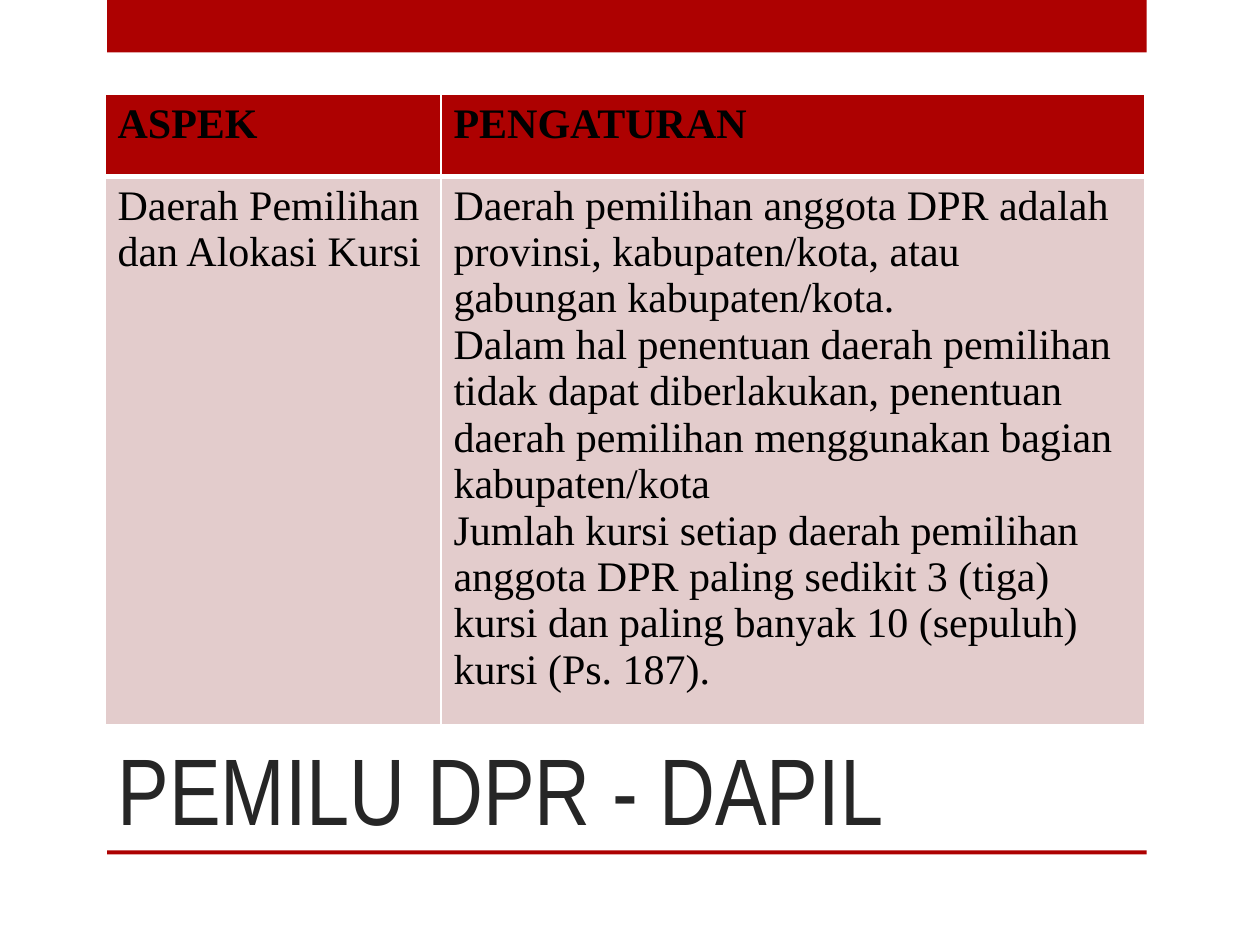
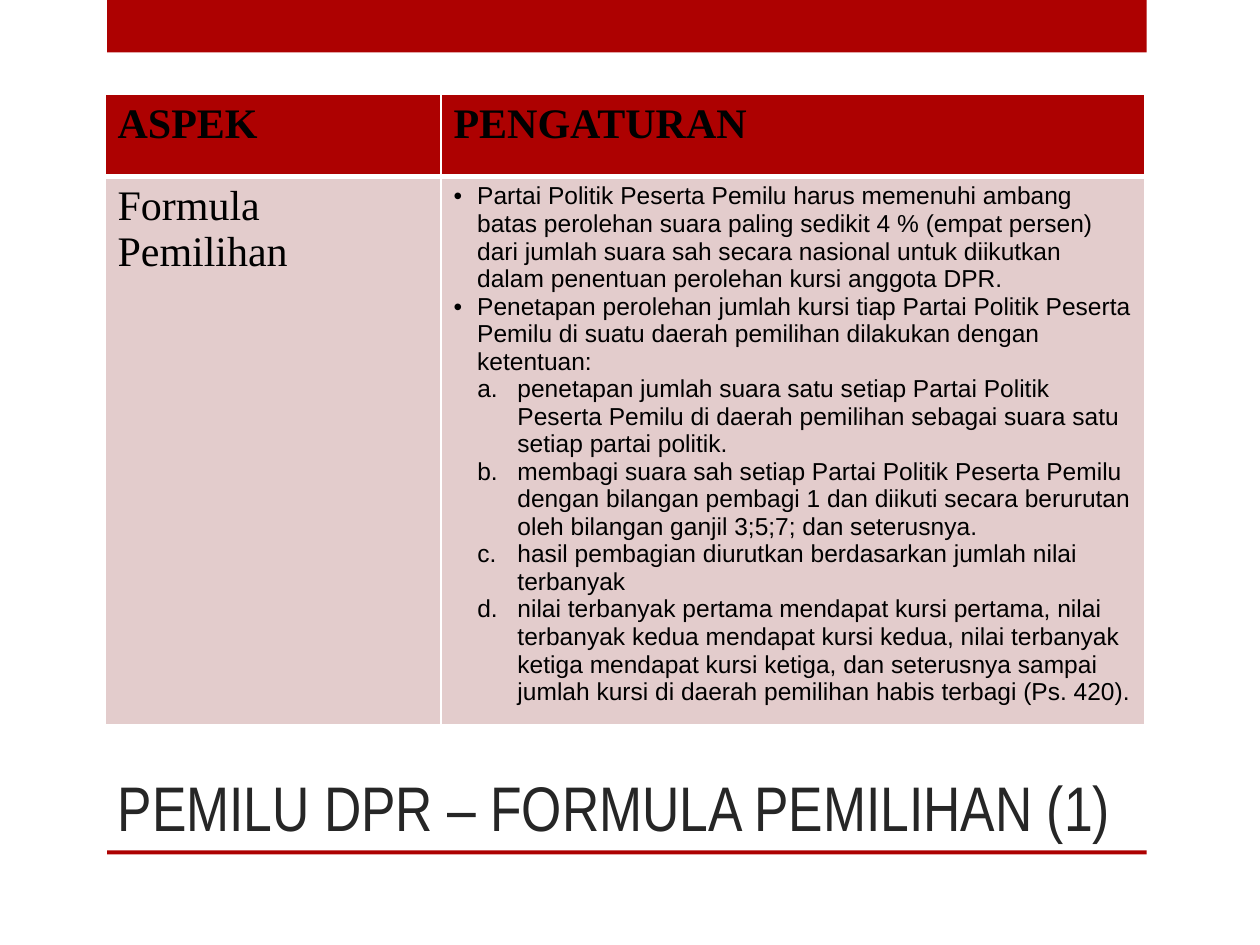
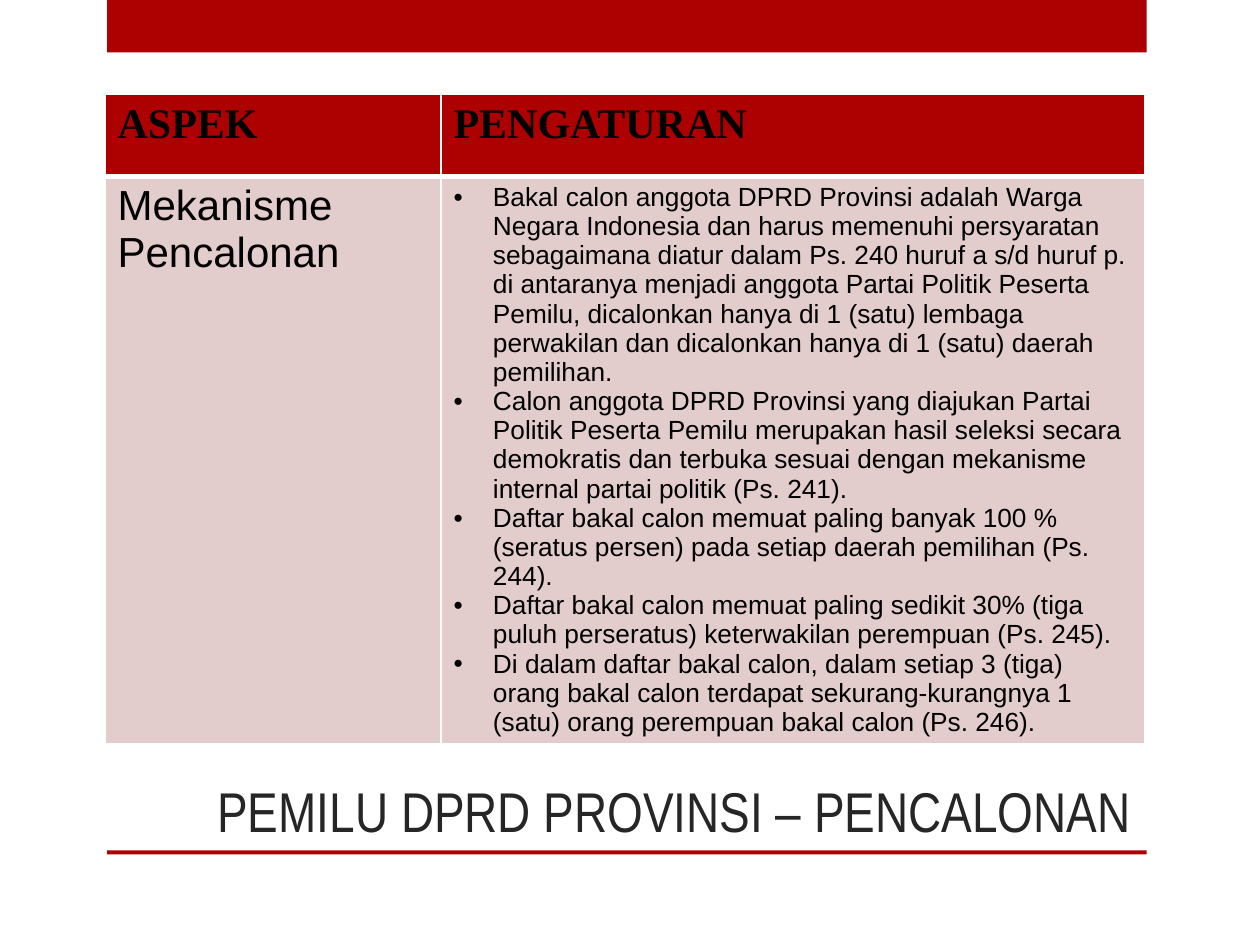
from lxml import etree
from pptx import Presentation
from pptx.dml.color import RGBColor
from pptx.enum.shapes import MSO_SHAPE
from pptx.enum.text import MSO_ANCHOR, MSO_AUTO_SIZE, PP_ALIGN
from pptx.oxml.ns import qn
from pptx.util import Pt

RECT = MSO_SHAPE.RECTANGLE
BOTTOM = MSO_ANCHOR.BOTTOM
NO_FIT = MSO_AUTO_SIZE.NONE
LEFT, RIGHT = PP_ALIGN.LEFT, PP_ALIGN.RIGHT

COLORS = {"red": "AD0101", "pink": "E3CCCC", "white": "FFFFFF",
          "black": "000000", "title": "262626"}
SERIF, SANS, NARROW = "Times New Roman", "Arial", "Arial Narrow"
BASE = {"name": SERIF, "size": Pt(24), "bold": False}
HEADER = {**BASE, "bold": True}
SANS_24 = {**BASE, "name": SANS}
SANS_15 = {**SANS_24, "size": Pt(15)}
SANS_14 = {**SANS_24, "size": Pt(14)}

TABLE_LEFT, TABLE_TOP = 60, 54
COLUMNS = (192, 402)
ROWS = (46.8, 313.2)
WIDTH = sum(COLUMNS)
BAND_LEFT = 61.2
BANDS = ((0, 30), (486, 2.2))

BULLET = ("buChar", {"char": "•"}, 13.5, 13.5)
WIDE_BULLET = ("buChar", {"char": "•"}, 22.5, 22.5)
LETTER = ("buAutoNum", {"type": "alphaLcPeriod"}, 36.5, 23)

DAPIL = [
    "Daerah pemilihan anggota DPR adalah provinsi, kabupaten/kota, atau gabungan kabupaten/kota.",
    "Dalam hal penentuan daerah pemilihan tidak dapat diberlakukan, penentuan daerah pemilihan "
    "menggunakan bagian kabupaten/kota",
    "Jumlah kursi setiap daerah pemilihan anggota DPR paling sedikit 3 (tiga) kursi dan paling "
    "banyak 10 (sepuluh) kursi (Ps. 187).",
]
FORMULA = [
    "Partai Politik Peserta Pemilu harus memenuhi ambang batas perolehan suara paling sedikit 4 % "
    "(empat persen) dari jumlah suara sah secara nasional untuk diikutkan dalam penentuan "
    "perolehan kursi anggota DPR.",
    "Penetapan perolehan jumlah kursi tiap Partai Politik Peserta Pemilu di suatu daerah pemilihan "
    "dilakukan dengan ketentuan:",
]
FORMULA_STEPS = [
    "penetapan jumlah suara satu setiap Partai Politik Peserta Pemilu di daerah pemilihan sebagai "
    "suara satu setiap partai politik.",
    "membagi suara sah setiap Partai Politik Peserta Pemilu dengan bilangan pembagi 1 dan diikuti "
    "secara berurutan oleh bilangan ganjil 3;5;7; dan seterusnya.",
    "hasil pembagian diurutkan berdasarkan jumlah nilai terbanyak",
    "nilai terbanyak pertama mendapat kursi pertama, nilai terbanyak kedua mendapat kursi kedua, "
    "nilai terbanyak ketiga mendapat kursi ketiga, dan seterusnya sampai jumlah kursi di daerah "
    "pemilihan habis terbagi (Ps. 420).",
]
PENCALONAN = [
    "Bakal calon anggota DPRD Provinsi adalah Warga Negara Indonesia dan harus memenuhi "
    "persyaratan sebagaimana diatur dalam Ps. 240 huruf a s/d huruf p. di antaranya menjadi "
    "anggota Partai Politik Peserta Pemilu, dicalonkan hanya di 1 (satu) lembaga perwakilan dan "
    "dicalonkan hanya di 1 (satu) daerah pemilihan.",
    "Calon anggota DPRD Provinsi yang diajukan Partai Politik Peserta Pemilu merupakan hasil "
    "seleksi secara demokratis dan terbuka sesuai dengan mekanisme internal partai politik (Ps. 241).",
    "Daftar bakal calon memuat paling banyak 100 % (seratus persen) pada setiap daerah pemilihan "
    "(Ps. 244).",
    "Daftar bakal calon memuat paling sedikit 30% (tiga puluh perseratus) keterwakilan perempuan "
    "(Ps. 245).",
    "Di dalam daftar bakal calon, dalam setiap 3 (tiga) orang bakal calon terdapat "
    "sekurang-kurangnya 1 (satu) orang perempuan bakal calon (Ps. 246).",
]


def rgb(color):
    return RGBColor.from_string(COLORS[color])


def add_run(p, text, font, color="black"):
    r = p.add_run()
    r.text = text
    for name, value in font.items():
        setattr(r.font, name, value)
    r.font.color.rgb = rgb(color)


def set_bullet(p, bullet):
    tag, attrs, indent, hanging = bullet
    pPr = p._p.get_or_add_pPr()
    pPr.set("marL", str(Pt(indent)))
    pPr.set("indent", str(-Pt(hanging)))
    etree.SubElement(pPr, qn("a:buFont"), typeface=SANS)
    etree.SubElement(pPr, qn(f"a:{tag}"), attrs)


def set_borders(cell, widths):
    tcPr = cell._tc.get_or_add_tcPr()
    for side, width in zip("LRTB", widths):
        ln = etree.SubElement(tcPr, qn(f"a:ln{side}"), w=str(Pt(width)))
        fill = etree.SubElement(ln, qn("a:solidFill"))
        etree.SubElement(fill, qn("a:srgbClr"), val=COLORS["white"])


def fill_cell(cell, items, font, fill, borders):
    set_borders(cell, borders)
    cell.fill.solid()
    cell.fill.fore_color.rgb = rgb(fill)
    tf = cell.text_frame
    for i, (text, bullet) in enumerate(items):
        p = tf.add_paragraph() if i else tf.paragraphs[0]
        if bullet:
            set_bullet(p, bullet)
        add_run(p, text, font)


def add_bands(s):
    for top, height in BANDS:
        sp = s.shapes.add_shape(RECT, Pt(BAND_LEFT), Pt(top), Pt(WIDTH), Pt(height))
        sp.shadow.inherit = False
        sp.fill.solid()
        sp.fill.fore_color.rgb = rgb("red")
        sp.line.fill.background()


def set_title(s, text, size, width, align):
    sp = s.shapes.title
    box = {"left": TABLE_LEFT, "top": 360, "width": width, "height": 126}
    for name, value in box.items():
        setattr(sp, name, Pt(value))
    tf = sp.text_frame
    for name, value in {"word_wrap": True, "auto_size": NO_FIT, "vertical_anchor": BOTTOM}.items():
        setattr(tf, name, value)
    p = tf.paragraphs[0]
    p.alignment = align
    add_run(p, text, {"name": NARROW, "size": Pt(size)}, "title")


def add_rules_table(s, aspect, aspect_font, rules, rules_font):
    table = s.shapes.add_table(2, 2, Pt(TABLE_LEFT), Pt(TABLE_TOP), Pt(WIDTH), Pt(sum(ROWS))).table
    table.first_row = table.horz_banding = False
    for column, width in zip(table.columns, COLUMNS):
        column.width = Pt(width)
    for row, height in zip(table.rows, ROWS):
        row.height = Pt(height)
    for i, heading in enumerate(("ASPEK", "PENGATURAN")):
        fill_cell(table.cell(0, i), [(heading, None)], HEADER, "red", (1, 1, 1, 3))
    body = (([(aspect, None)], aspect_font), (rules, rules_font))
    for i, (items, font) in enumerate(body):
        fill_cell(table.cell(1, i), items, font, "pink", (1, 1, 3, 1))


def with_bullet(texts, bullet=None):
    return [(text, bullet) for text in texts]


def add_slide(prs, title, table):
    s = prs.slides.add_slide(prs.slide_layouts[5])
    add_bands(s)
    set_title(s, *title)
    add_rules_table(s, *table)


def main():
    prs = Presentation()
    prs.slide_width, prs.slide_height = Pt(720), Pt(540)
    add_slide(prs, ("PEMILU DPR - DAPIL", 54, 534, LEFT),
              ("Daerah Pemilihan dan Alokasi Kursi", BASE, with_bullet(DAPIL), BASE))
    add_slide(prs, ("PEMILU DPR – FORMULA PEMILIHAN (1)", 36, 600, LEFT),
              ("Formula Pemilihan", BASE,
               with_bullet(FORMULA, BULLET) + with_bullet(FORMULA_STEPS, LETTER), SANS_14))
    add_slide(prs, ("PEMILU DPRD PROVINSI – PENCALONAN", 32, WIDTH, RIGHT),
              ("Mekanisme Pencalonan", SANS_24, with_bullet(PENCALONAN, WIDE_BULLET), SANS_15))
    prs.save("out.pptx")


if __name__ == "__main__":
    main()
